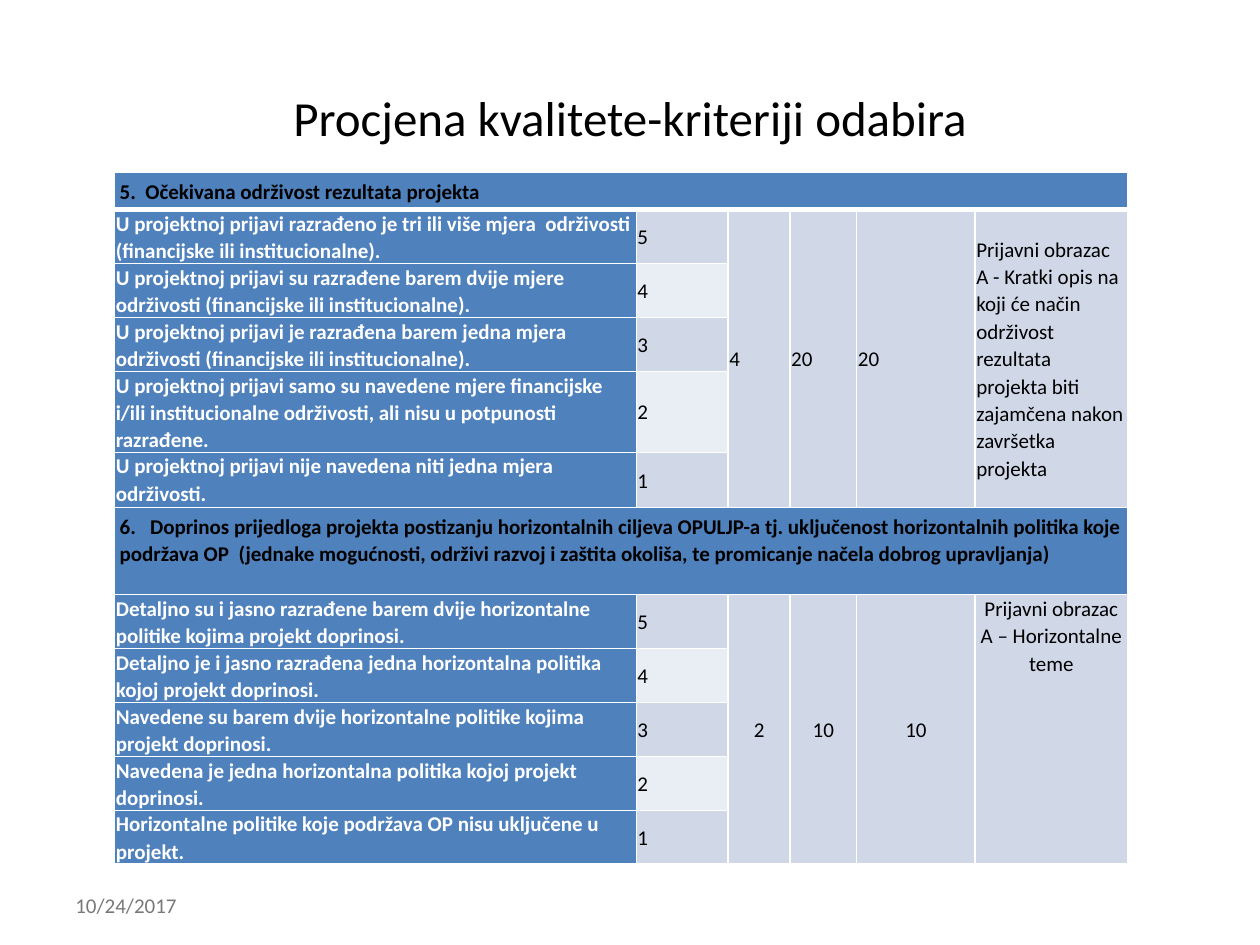
from dataclasses import dataclass

from lxml import etree
from pptx import Presentation
from pptx.dml.color import RGBColor
from pptx.enum.text import MSO_ANCHOR, PP_ALIGN
from pptx.oxml.ns import qn
from pptx.util import Inches, Pt

TOP, MIDDLE = MSO_ANCHOR.TOP, MSO_ANCHOR.MIDDLE
LEFT, CENTER = PP_ALIGN.LEFT, PP_ALIGN.CENTER


@dataclass(frozen=True)
class Theme:
    font: str = "Calibri"
    title: int = 28
    body: int = 12
    black: str = "000000"
    white: str = "FFFFFF"
    grey: str = "777877"
    blue: str = "4F81BD"
    pale: str = "D0D8E8"
    light: str = "E9EDF4"


THEME = Theme()
COLS = [4.14, 0.73, 0.49, 0.53, 0.94, 1.21]
ROWS = [0.28, 0.4, 0.4, 0.4, 0.61, 0.44, 0.69, 0.4, 0.4, 0.4, 0.4, 0.4]

# Each group: heading, criteria from 5 points to 1, merged cells, their layout
GROUPS = [
    ("5.  Očekivana održivost rezultata projekta",
     ["U projektnoj prijavi razrađeno je tri ili više mjera  održivosti "
      "(financijske ili institucionalne).",
      "U projektnoj prijavi su razrađene barem dvije mjere  održivosti "
      "(financijske ili institucionalne).",
      "U projektnoj prijavi je razrađena barem jedna mjera  održivosti "
      "(financijske ili institucionalne).",
      "U projektnoj prijavi samo su navedene mjere financijske i/ili "
      "institucionalne održivosti, ali nisu u potpunosti razrađene.",
      "U projektnoj prijavi nije navedena niti jedna mjera održivosti."],
     ["4", "20", "20",
      "Prijavni obrazac A - Kratki opis na koji će način održivost "
      "rezultata projekta biti zajamčena nakon završetka projekta"],
     LEFT, MIDDLE),
    ("6.   Doprinos prijedloga projekta postizanju horizontalnih ciljeva "
     "OPULJP-a tj. uključenost horizontalnih politika koje podržava OP  "
     "(jednake mogućnosti, održivi razvoj i zaštita okoliša, te promicanje "
     "načela dobrog upravljanja)",
     ["Detaljno su i jasno razrađene barem dvije horizontalne politike "
      "kojima projekt doprinosi.",
      "Detaljno je i jasno razrađena jedna horizontalna politika kojoj "
      "projekt doprinosi.",
      "Navedene su barem dvije horizontalne politike kojima projekt "
      "doprinosi.",
      "Navedena je jedna horizontalna politika kojoj projekt doprinosi.",
      "Horizontalne politike koje podržava OP nisu uključene u projekt."],
     ["2", "10", "10", "Prijavni obrazac A – Horizontalne teme"],
     CENTER, TOP),
]


def style(para, size, color, bold=False, align=LEFT):
    para.alignment = align
    font = para.font
    font.name, font.size, font.bold = THEME.font, Pt(size), bold
    font.color.rgb = RGBColor.from_string(color)


def add_title(slide, text):
    title = slide.shapes.title
    title.left, title.top = Inches(0.5), Inches(0.3)
    title.width, title.height = Inches(9), Inches(1.25)
    title.text_frame.text = text
    title.text_frame.vertical_anchor = MIDDLE
    style(title.text_frame.paragraphs[0], THEME.title, THEME.black,
          align=CENTER)


def add_date(slide, text):
    box = slide.shapes.add_textbox(Inches(0.5), Inches(6.98),
                                   Inches(2.33), Inches(0.4))
    frame = box.text_frame
    frame.word_wrap = True
    frame.vertical_anchor = MIDDLE
    frame.text = text
    style(frame.paragraphs[0], THEME.body, THEME.grey)


def fill_cell(cell, text, fill, color, bold=False, align=LEFT, anchor=TOP,
              side=0.01, edge=0):
    cell.fill.solid()
    cell.fill.fore_color.rgb = RGBColor.from_string(fill)
    cell.margin_left = cell.margin_right = Inches(side)
    cell.margin_top = cell.margin_bottom = Inches(edge)
    cell.vertical_anchor = anchor
    cell.text = text
    para = cell.text_frame.paragraphs[0]
    para.line_spacing, para.space_after = 1.07, Pt(8)
    style(para, THEME.body, color, bold, align)


def set_rules(cell, row):
    # Border lines come before the fill in the cell properties
    props = cell._tc.get_or_add_tcPr()
    thick = {"T": row == 1, "B": row == 0}
    for spot, side in enumerate("LRTB"):
        width = Pt(3 if thick.get(side) else 1)
        line = etree.Element(qn(f"a:ln{side}"), w=str(width))
        solid = etree.SubElement(line, qn("a:solidFill"))
        etree.SubElement(solid, qn("a:srgbClr"), val=THEME.white)
        props.insert(spot, line)


def fill_group(table, top, group):
    head, items, notes, align, anchor = group
    last = len(COLS) - 1

    # Heading across all columns
    table.cell(top, 0).merge(table.cell(top, last))
    fill_cell(table.cell(top, 0), head, THEME.blue, THEME.black, True,
              side=0.04, edge=0.04)

    # Criteria and their points
    for step, item in enumerate(items):
        row = top + 1 + step
        fill_cell(table.cell(row, 0), item, THEME.blue, THEME.white, True)
        band = THEME.light if step % 2 else THEME.pale
        fill_cell(table.cell(row, 1), str(len(items) - step), band,
                  THEME.black, anchor=MIDDLE)

    # Weights and source, merged over the criteria
    for col, note in enumerate(notes, 2):
        cell = table.cell(top + 1, col)
        cell.merge(table.cell(top + len(items), col))
        fill_cell(cell, note, THEME.pale, THEME.black, align=align,
                  anchor=anchor if col == last else MIDDLE)


def add_grid(slide):
    frame = slide.shapes.add_table(len(ROWS), len(COLS), Inches(0.91),
                                   Inches(1.37), Inches(sum(COLS)),
                                   Inches(sum(ROWS)))
    table = frame.table
    table.first_row = table.horz_banding = False
    for col, width in zip(table.columns, COLS):
        col.width = Inches(width)
    for row, height in zip(table.rows, ROWS):
        row.height = Inches(height)
    top = 0
    for group in GROUPS:
        fill_group(table, top, group)
        top += 1 + len(group[1])
    for row in range(len(ROWS)):
        for col in range(len(COLS)):
            set_rules(table.cell(row, col), row)


def main():
    deck = Presentation()
    deck.slide_width, deck.slide_height = Inches(10), Inches(7.5)
    slide = deck.slides.add_slide(deck.slide_layouts[5])
    add_date(slide, "10/24/2017")
    add_title(slide, "Procjena kvalitete-kriteriji odabira")
    add_grid(slide)
    deck.save("out.pptx")


if __name__ == "__main__":
    main()
